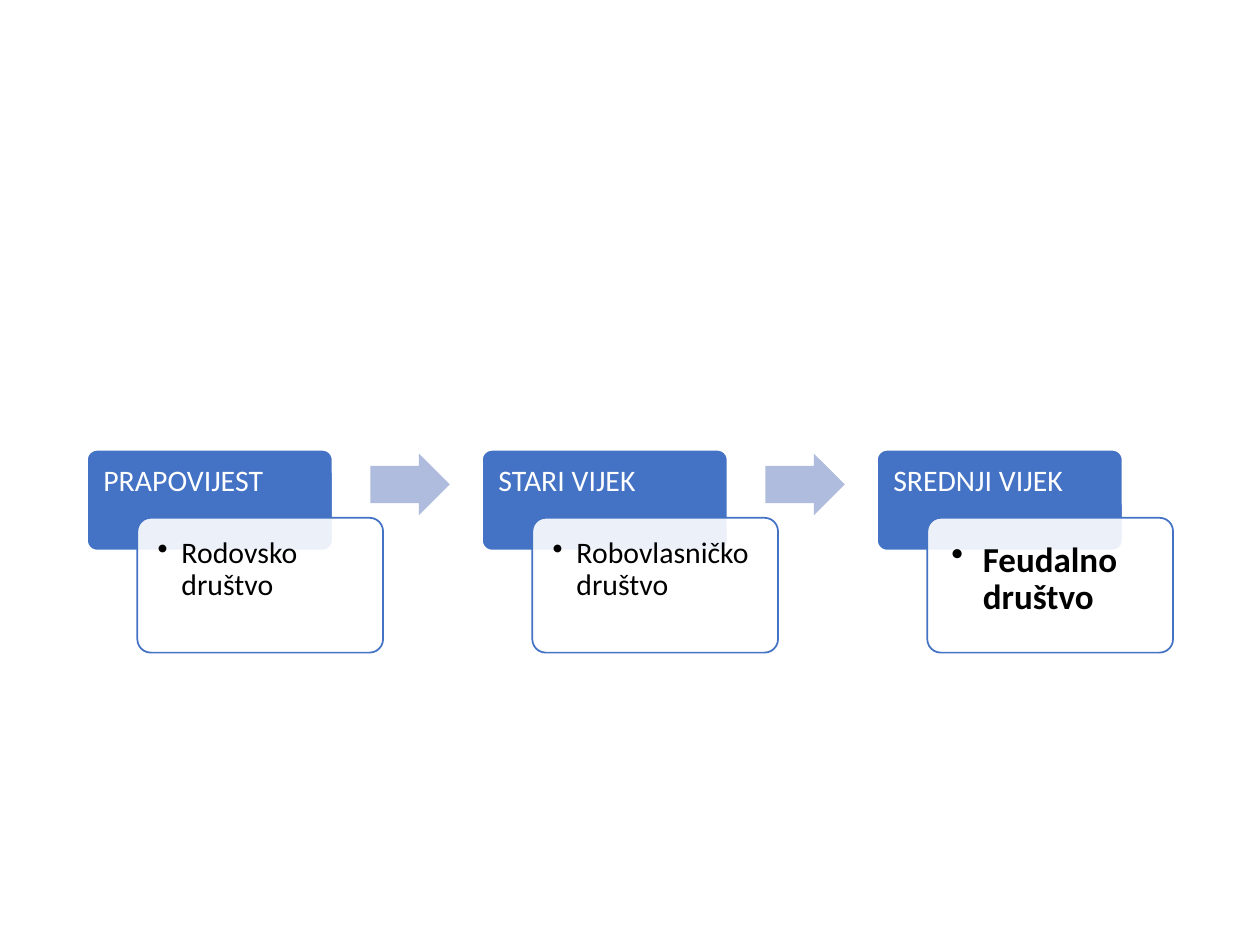
from lxml import etree
from pptx import Presentation
from pptx.dml.color import RGBColor
from pptx.enum.shapes import MSO_SHAPE
from pptx.oxml.ns import qn
from pptx.util import Inches, Pt

BLUE, PALE, WHITE, BLACK = "4472C4", "B0BCDE", "FFFFFF", "000000"

deck = Presentation()
deck.slide_width, deck.slide_height = Inches(10), Inches(7.5)
slide = deck.slides.add_slide(deck.slide_layouts[6])


def add_shape(kind, box, fill, line=None, adjust=(0.1,), alpha=None):
    """Draw a preset shape; alpha is its opacity in percent."""
    shape = slide.shapes.add_shape(kind, *map(Inches, box))
    shape.shadow.inherit = False
    for i, value in enumerate(adjust):
        shape.adjustments[i] = value
    shape.fill.solid()
    shape.fill.fore_color.rgb = RGBColor.from_string(fill)
    if alpha:
        color = shape.fill._xPr.find(qn("a:solidFill"))[0]
        etree.SubElement(color, qn("a:alpha"), val=str(alpha * 1000))
    if line:
        shape.line.color.rgb = RGBColor.from_string(line)
        shape.line.width = Pt(1)
    else:
        shape.line.fill.background()


def add_text(text, box, color, size=17, bold=False, inset=0.13, base=0.13,
             indent=None):
    """Add a text box; base is its bottom inset, indent makes it a bullet."""
    frame = slide.shapes.add_textbox(*map(Inches, box)).text_frame
    frame.word_wrap = True
    frame.margin_left = frame.margin_right = frame.margin_top = Inches(inset)
    frame.margin_bottom = Inches(base)
    para = frame.paragraphs[0]
    para.line_spacing = 0.9
    if indent:
        para.level = 1
        props = para._p.get_or_add_pPr()
        props.set("marL", str(Inches(indent)))
        props.set("indent", str(-Inches(indent)))
        etree.SubElement(props, qn("a:buChar"), char="•")
    run = para.add_run()
    run.text = text
    run.font.name, run.font.size, run.font.bold = "Calibri", Pt(size), bold
    run.font.color.rgb = RGBColor.from_string(color)


plain = dict(indent=0.19)
strong = dict(size=20, bold=True, inset=0.16, base=0.16, indent=0.25)
ages = [
    ("PRAPOVIJEST", "Rodovsko društvo", plain),
    ("STARI VIJEK", "Robovlasničko društvo", plain),
    ("SREDNJI VIJEK", "Feudalno društvo", strong),
]
left, top, width, step = 0.69, 3.57, 1.95, 3.135

for i, (age, order, style) in enumerate(ages):
    x = left + i * step
    add_shape(MSO_SHAPE.ROUNDED_RECTANGLE, (x, top, width, 0.8), BLUE, WHITE)
    add_text(age, (x, top, width, 0.54), WHITE, base=0.07)
    add_shape(MSO_SHAPE.ROUNDED_RECTANGLE, (x + 0.4, top + 0.54, width, 1.07),
              WHITE, BLUE, alpha=90)
    add_text(order, (x + 0.43, top + 0.57, 1.89, 1.01), BLACK, **style)
    if i < len(ages) - 1:
        add_shape(MSO_SHAPE.RIGHT_ARROW, (x + 2.25, top + 0.03, 0.63, 0.49),
                  PALE, adjust=(0.6, 0.5))

deck.save("out.pptx")
